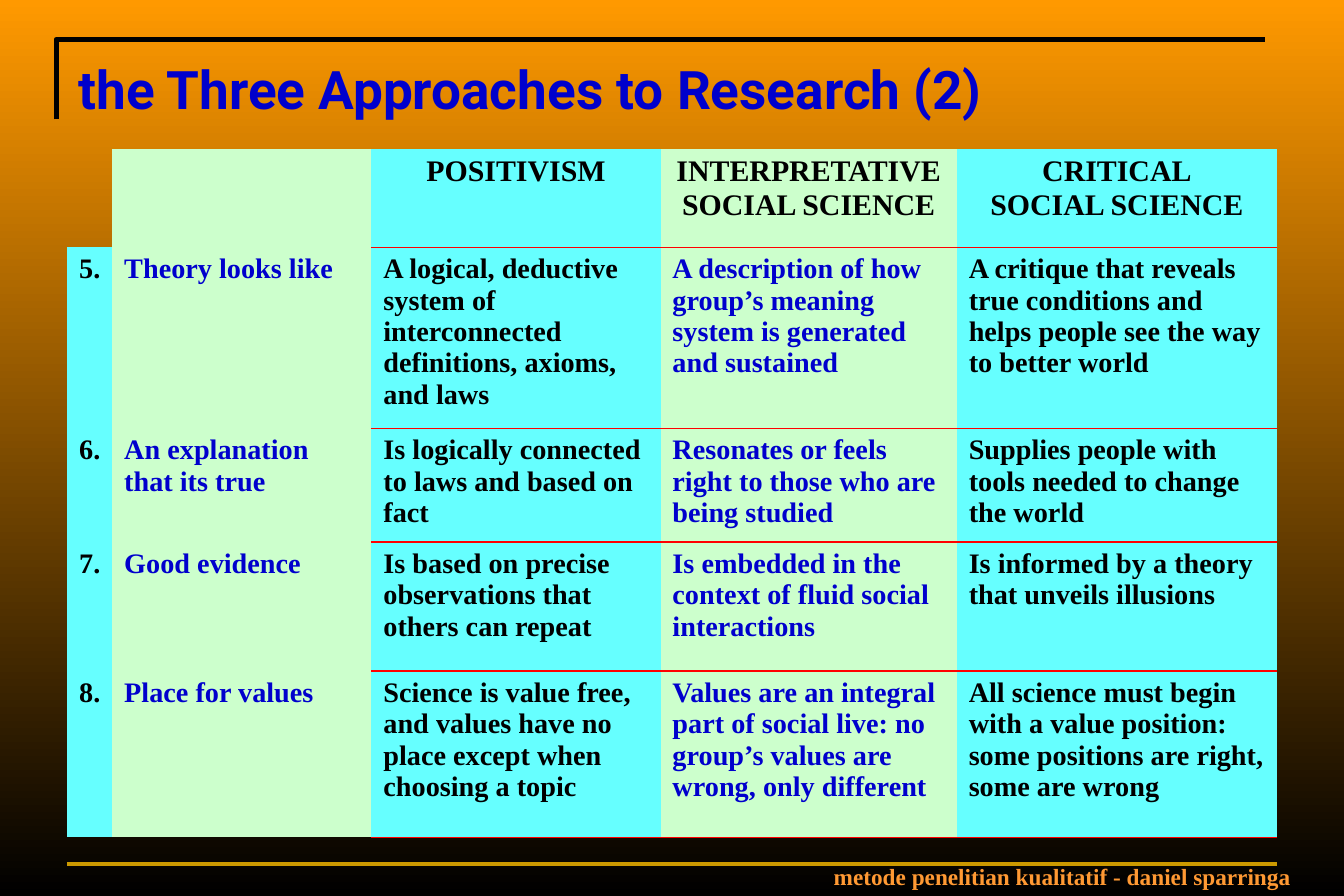
from lxml import etree
from pptx import Presentation
from pptx import util as u
from pptx.dml.color import RGBColor
from pptx.enum import shapes, text
from pptx.oxml.ns import qn

COLOURS = {
    "orange": "FF9900", "black": "000000", "gold": "CC9900", "amber": "FF9933",
    "blue": "0000CC", "cyan": "66FFFF", "green": "CCFFCC", "red": "FF0000",
}
LEFT, CENTRE, RIGHT = text.PP_ALIGN.LEFT, text.PP_ALIGN.CENTER, text.PP_ALIGN.RIGHT

COLUMN_WIDTHS = [0.38, 2.17, 2.42, 2.48, 2.68]
ROW_HEIGHTS = [0.82, 1.39, 0.77, 1.08, 1.39]
COLUMN_FILLS = ["cyan", "green", "cyan", "green", "cyan"]
COLUMN_INKS = ["black", "blue", "black", "blue", "black"]
ROWS = [
    ["", "", "POSITIVISM", "INTERPRETATIVE\nSOCIAL SCIENCE", "CRITICAL\nSOCIAL SCIENCE"],
    ["5.", "Theory looks like",
     "A logical, deductive system of interconnected definitions, axioms, and laws",
     "A description of how group’s meaning system is generated and sustained",
     "A critique that reveals true conditions and helps people see the way to better world"],
    ["6.", "An explanation that its true",
     "Is logically connected to laws and based on fact",
     "Resonates or feels right to those who are being studied",
     "Supplies people with tools needed to change the world"],
    ["7.", "Good evidence",
     "Is based on precise observations that others can repeat",
     "Is embedded in the context of fluid social interactions",
     "Is informed by a theory that unveils illusions"],
    ["8.", "Place for values",
     "Science is value free, and values have no place except when choosing a topic",
     "Values are an integral part of social live: no group’s values are wrong, only different",
     "All science must begin with a value position: some positions are right, some are wrong"],
]


def rgb(colour):
    return RGBColor.from_string(COLOURS[colour])


class Page:
    """Holds the style and the current slide."""

    body_font = "Times New Roman"
    title_font = "Roboto"

    def __init__(self, deck):
        self.slide = deck.slides.add_slide(deck.slide_layouts[6])

    def background(self, top, bottom):
        fill = self.slide.background.fill
        fill.gradient()
        fill.gradient_angle = 270
        for stop, colour, position in zip(fill.gradient_stops, (top, bottom), (0, 1)):
            stop.color.rgb = rgb(colour)
            stop.position = position

    def set_words(self, frame, words, size, colour, font=None, align=LEFT):
        frame.text = words
        for para in frame.paragraphs:
            para.alignment = align
            para.font.name = font or self.body_font
            para.font.size = u.Pt(size)
            para.font.bold = True
            para.font.color.rgb = rgb(colour)

    def label(self, place, words, size, colour, font=None, anchor=text.MSO_ANCHOR.TOP):
        box = self.slide.shapes.add_textbox(*map(u.Inches, place))
        box.text_frame.word_wrap = True
        box.text_frame.vertical_anchor = anchor
        self.set_words(box.text_frame, words, size, colour, font)

    def corner(self, points, colour, width):
        start, *others = [(u.Inches(x), u.Inches(y)) for x, y in points]
        builder = self.slide.shapes.build_freeform(*start)
        builder.add_line_segments(others, close=False)
        shape = builder.convert_to_shape()
        shape.shadow.inherit = False
        shape.fill.background()
        shape.line.color.rgb = rgb(colour)
        shape.line.width = u.Pt(width)

    def rule(self, start, end, colour, width):
        rule = self.slide.shapes.add_connector(
            shapes.MSO_CONNECTOR.STRAIGHT, *map(u.Inches, start + end))
        rule.line.color.rgb = rgb(colour)
        rule.line.width = u.Pt(width)
        etree.SubElement(rule._element.spPr, qn("a:effectLst"))

    def borders(self, cell, red_sides):
        properties = cell._tc.get_or_add_tcPr()
        for index, side in enumerate("LRTB"):
            edge = etree.Element(qn("a:ln" + side), w=str(u.Pt(1)))
            if side in red_sides:
                solid = etree.SubElement(edge, qn("a:solidFill"))
                etree.SubElement(solid, qn("a:srgbClr"), val=COLOURS["red"])
            else:
                etree.SubElement(edge, qn("a:noFill"))
            properties.insert(index, edge)

    def table(self, left, top):
        size = (sum(COLUMN_WIDTHS), sum(ROW_HEIGHTS))
        table = self.slide.shapes.add_table(
            len(ROWS), len(COLUMN_WIDTHS), *map(u.Inches, (left, top) + size)).table
        table.first_row = table.horz_banding = False
        for column, width in zip(table.columns, COLUMN_WIDTHS):
            column.width = u.Inches(width)
        for row, height in zip(table.rows, ROW_HEIGHTS):
            row.height = u.Inches(height)
        for r, row in enumerate(ROWS):
            for c, words in enumerate(row):
                self.cell(table.cell(r, c), words, r == 0, c)

    def cell(self, cell, words, header, column):
        if header:
            size, colour, align = 18, "black", CENTRE
        else:
            size, colour, align = 17, COLUMN_INKS[column], LEFT if column else RIGHT
        self.set_words(cell.text_frame, words, size, colour, align=align)
        if column == 0:
            cell.margin_left = u.Inches(0.05)
        if header and column == 0:
            cell.fill.background()
        else:
            cell.fill.solid()
            cell.fill.fore_color.rgb = rgb(COLUMN_FILLS[column])
        self.borders(cell, "" if column < 2 else "B" if header else "TB")


def main():
    deck = Presentation()
    deck.slide_width, deck.slide_height = u.Inches(11.25), u.Inches(7.5)
    page = Page(deck)

    # Backdrop and frame lines
    page.background("orange", "black")
    page.corner([(0.47, 1), (0.47, 0.33), (10.59, 0.33)], "black", 3)
    page.rule((0.56, 7.23), (10.69, 7.23), "gold", 2.25)

    # Footer and title
    page.label((6.88, 7, 4.12, 0.5), "metode penelitian kualitatif - daniel sparringa",
               14, "amber", anchor=text.MSO_ANCHOR.BOTTOM)
    page.label((0.56, 0.42, 10.12, 0.75), "the Three Approaches to Research (2)",
               32, "blue", page.title_font)

    # Comparison of the approaches
    page.table(0.56, 1.25)

    deck.save("out.pptx")


if __name__ == "__main__":
    main()
